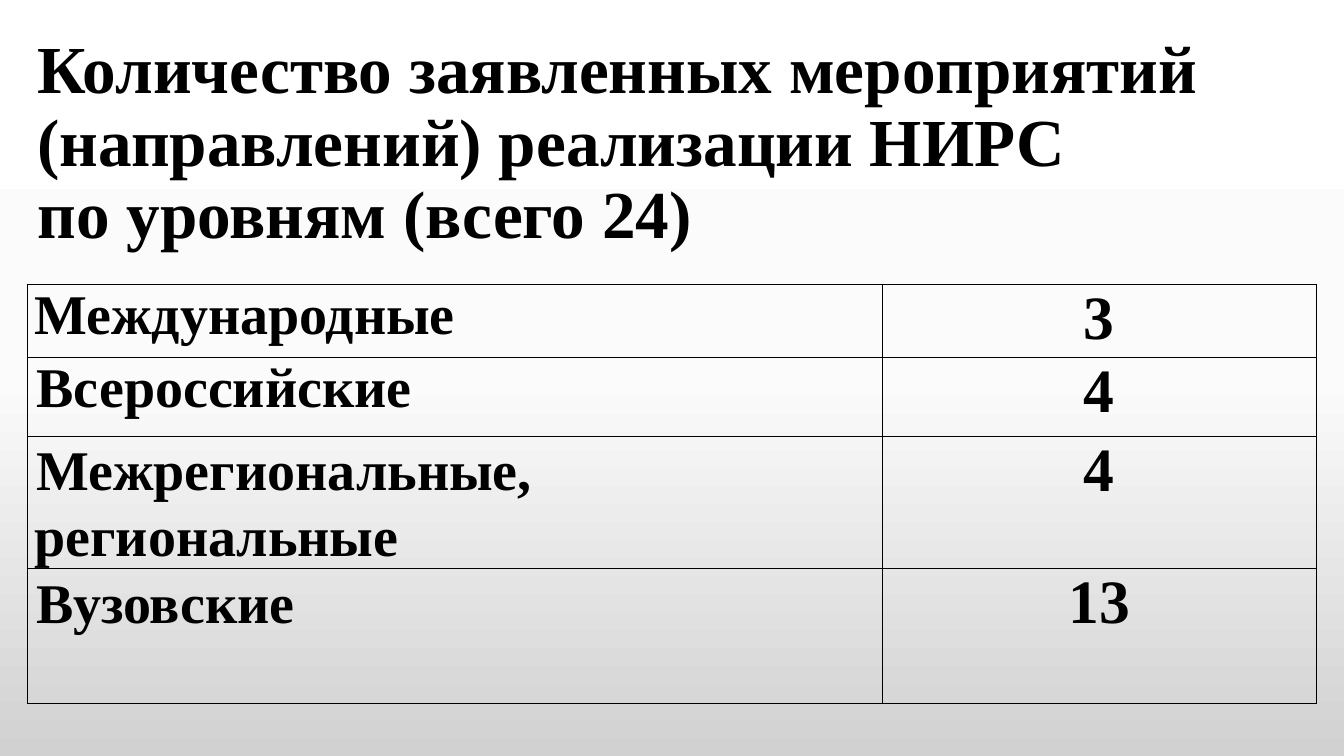
from copy import deepcopy

from pptx import Presentation
from pptx.dml.color import RGBColor
from pptx.enum.text import MSO_ANCHOR as Anchor, MSO_AUTO_SIZE as AutoSize, PP_ALIGN as Align
from pptx.oxml import parse_xml
from pptx.oxml.ns import nsdecls
from pptx.util import Cm, Pt

COLORS = {"text": "000000", "border": "000000",
          "top": "FFFFFF", "middle": "FBFBFB", "bottom": "D1D1D1"}
FONT = "Times New Roman"
LEFT, WIDTH = Cm(0.69), Cm(32.49)
TITLE = "Количество заявленных мероприятий (направлений) реализации НИРС \vпо уровням (всего 24)"
LEVELS = [
    ("Международные", "3", Cm(1.85), Align.LEFT, 0, None),
    ("Всероссийские\u00a0", "4", Cm(1.98), Align.JUSTIFY, Cm(0.05), None),
    ("Межрегиональные, региональные", "4", Cm(3.12), Align.LEFT, Cm(0.05), 1.07),
    ("Вузовские", "13", Cm(3.4), Align.LEFT, Cm(0.05), 1.07),
]


def paint_background(slide):
    """Fill the slide with a vertical three-stop gradient."""
    fill = slide.background.fill
    fill.gradient()
    fill.gradient_angle = 270
    stop_list = slide.element.xpath(".//p:bg//a:gsLst")[0]
    stop_list.append(deepcopy(stop_list[0]))
    for stop, name, position in zip(fill.gradient_stops, ("top", "middle", "bottom"), (0, 0.5, 1)):
        stop.color.rgb = RGBColor.from_string(COLORS[name])
        stop.position = position


def format_text(paragraph, size, align=Align.LEFT, spacing=None):
    """Apply the slide's bold serif style to a paragraph."""
    paragraph.alignment = align
    if spacing:
        paragraph.line_spacing = spacing
    for run in paragraph.runs:
        run.font.name = FONT
        run.font.size = Pt(size)
        run.font.bold = True
        run.font.color.rgb = RGBColor.from_string(COLORS["text"])


def add_title(slide):
    """Place and format the slide title."""
    title = slide.shapes.title
    title.left, title.top, title.width, title.height = LEFT, Cm(0.84), WIDTH, Cm(5.61)
    frame = title.text_frame
    frame.text = TITLE
    frame.word_wrap = True
    frame.auto_size = AutoSize.NONE
    frame.vertical_anchor = Anchor.MIDDLE
    format_text(frame.paragraphs[0], 48, spacing=0.9)


def fill_cell(cell, text, size, align, indent=0, spacing=None):
    """Write one bordered, transparent table cell."""
    cell.text = text
    cell.margin_left = cell.margin_right = Cm(0.18)
    cell.margin_top = cell.margin_bottom = 0
    paragraph = cell.text_frame.paragraphs[0]
    format_text(paragraph, size, align, spacing)
    paragraph._p.get_or_add_pPr().set("indent", str(int(indent)))
    properties = cell._tc.get_or_add_tcPr()
    for side in "LRTB":
        properties.append(parse_xml(
            f'<a:ln{side} {nsdecls("a")} w="{Pt(1)}"><a:solidFill>'
            f'<a:srgbClr val="{COLORS["border"]}"/></a:solidFill></a:ln{side}>'))
    cell.fill.background()


def add_levels_table(slide):
    """Add the table of event counts by level."""
    height = sum(level[2] for level in LEVELS)
    table = slide.shapes.add_table(len(LEVELS), 2, LEFT, Cm(7.16), WIDTH, height).table
    table.first_row = table.horz_banding = False
    table.columns[0].width, table.columns[1].width = Cm(21.54), Cm(10.95)
    for row, (level, count, row_height, align, indent, spacing) in zip(table.rows, LEVELS):
        row.height = row_height
        fill_cell(row.cells[0], level, 40, align, indent, spacing)
        fill_cell(row.cells[1], count, 44, Align.CENTER)


def main():
    """Build and save the presentation."""
    deck = Presentation()
    deck.slide_width, deck.slide_height = Cm(33.87), Cm(19.05)
    slide = deck.slides.add_slide(deck.slide_layouts[5])
    paint_background(slide)
    add_title(slide)
    add_levels_table(slide)
    deck.save("out.pptx")


if __name__ == "__main__":
    main()
